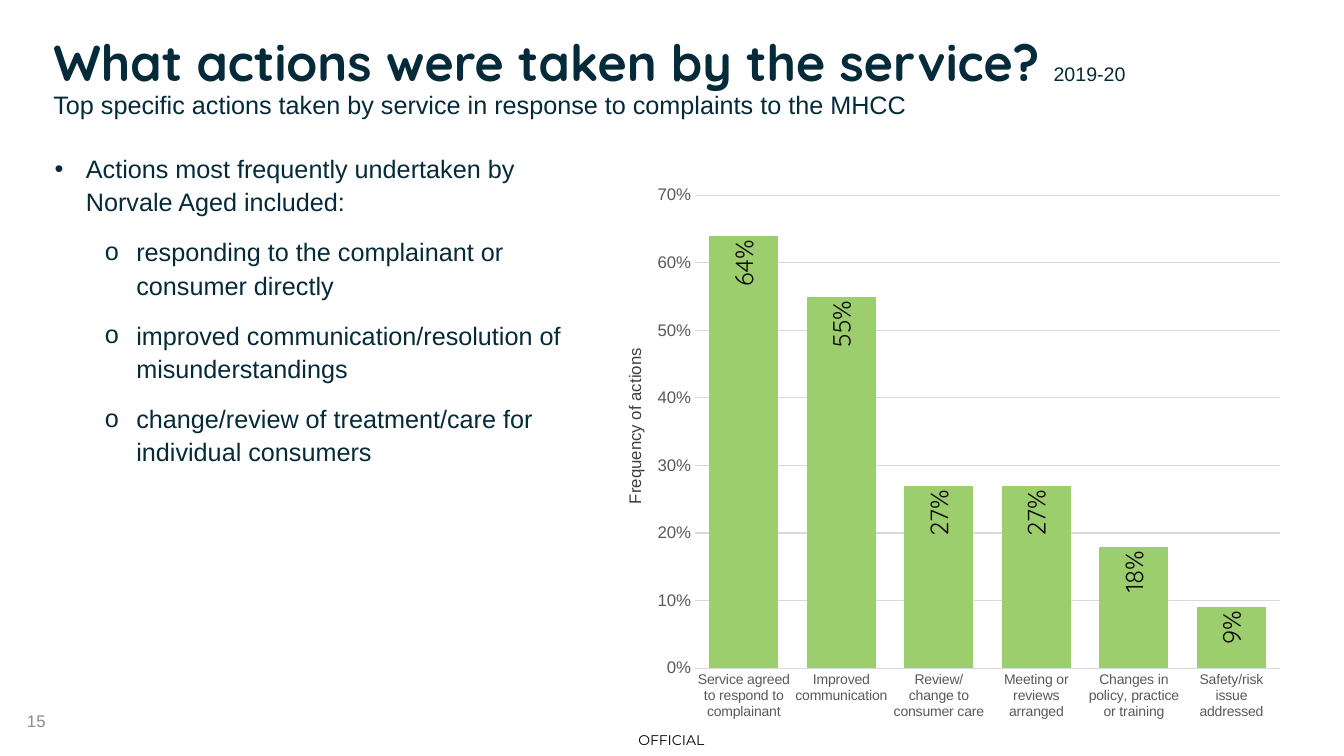
from lxml import etree
from pptx import Presentation
from pptx.chart.data import CategoryChartData
from pptx.dml.color import RGBColor
from pptx.enum.chart import XL_CHART_TYPE as ChartType
from pptx.enum.chart import XL_LABEL_POSITION as LabelPosition
from pptx.enum.chart import XL_TICK_MARK as TickMark
from pptx.enum.text import MSO_ANCHOR as Anchor
from pptx.enum.text import MSO_AUTO_SIZE as AutoSize
from pptx.enum.text import PP_ALIGN as Align
from pptx.oxml.ns import qn
from pptx.util import Cm, Pt

NAVY = RGBColor(0x05, 0x2A, 0x39)
GREEN = RGBColor(0x9D, 0xCE, 0x6E)
BLACK = RGBColor(0x00, 0x00, 0x00)
INK = RGBColor(0x0D, 0x0D, 0x0D)
DARK_GREY = RGBColor(0x40, 0x40, 0x40)
AXIS_GREY = RGBColor(0x59, 0x59, 0x59)
NUMBER_GREY = RGBColor(0x8C, 0x8C, 0x8C)
GRID_GREY = RGBColor(0xD9, 0xD9, 0xD9)

ACTIONS_INTRO = "Actions most frequently undertaken by Norvale Aged included:"
ACTIONS = [
    "responding to the complainant or consumer directly",
    "improved communication/resolution of misunderstandings",
    "change/review of treatment/care for individual consumers",
]
FREQUENCIES = {
    "Service agreed to respond to complainant": 0.64,
    "Improved communication": 0.55,
    "Review/change to consumer care": 0.27,
    "Meeting or reviews arranged": 0.27,
    "Changes in policy, practice or training": 0.18,
    "Safety/risk issue addressed": 0.09,
}


def style_font(font, size, color, name="Arial", bold=False):
    font.size, font.name, font.bold = Pt(size), name, bold
    font.color.rgb = color


def write(para, text, size=18, color=NAVY, name="Arial", bold=False,
          align=Align.LEFT, spacing=1.0, before=0, after=0):
    """Add a formatted span of text to a paragraph."""
    para.alignment, para.line_spacing = align, spacing
    para.space_before, para.space_after = Pt(before), Pt(after)
    span = para.add_run()
    span.text = text
    style_font(span.font, size, color, name, bold)


def add_bullet(para, char, left, hanging):
    props = para._p.get_or_add_pPr()
    props.set("marL", str(Cm(left)))
    props.set("indent", str(-Cm(hanging)))
    color = etree.SubElement(props, qn("a:buClr"))
    etree.SubElement(color, qn("a:srgbClr"), val=str(NAVY))
    etree.SubElement(props, qn("a:buFont"), typeface="Arial")
    etree.SubElement(props, qn("a:buChar"), char=char)


class SlideBuilder:
    def __init__(self, deck):
        self.page = deck.slides.add_slide(deck.slide_layouts[1])

    def place(self, shape, left, top, width, height, anchor=Anchor.TOP):
        shape.left, shape.top = Cm(left), Cm(top)
        shape.width, shape.height = Cm(width), Cm(height)
        frame = shape.text_frame
        frame.word_wrap, frame.auto_size = True, AutoSize.NONE
        frame.vertical_anchor = anchor
        return frame

    def title(self, heading, period, subtitle, *place):
        frame = self.place(self.page.shapes.title, *place)
        first = frame.paragraphs[0]
        write(first, heading, size=36, name="Quicksand", bold=True, spacing=0.9)
        write(first, period, size=14, spacing=0.9)
        write(frame.add_paragraph(), subtitle, spacing=0.9)

    def bullets(self, intro, items, *place):
        frame = self.place(self.page.placeholders[1], *place)
        first = frame.paragraphs[0]
        add_bullet(first, "•", 0.79, 0.79)
        write(first, intro, spacing=1.1, after=6)
        for item in items:
            para = frame.add_paragraph()
            para.level = 1
            add_bullet(para, "o", 2.06, 0.79)
            write(para, item, spacing=1.1, before=6, after=6)

    def label(self, text, *place, rotation=0, inset=None, **style):
        box = self.page.shapes.add_textbox(0, 0, 0, 0)
        frame = self.place(box, *place, anchor=Anchor.MIDDLE)
        box.rotation = rotation
        if inset is not None:
            frame.margin_left = frame.margin_right = Cm(inset)
            frame.margin_top = frame.margin_bottom = Cm(inset)
        write(frame.paragraphs[0], text, **style)

    def column_chart(self, values, left, top, width, height, plot_area):
        data = CategoryChartData(number_format="0%")
        data.categories = list(values)
        data.add_series("Series 1", list(values.values()))
        chart = self.page.shapes.add_chart(
            ChartType.COLUMN_CLUSTERED, Cm(left), Cm(top),
            Cm(width), Cm(height), data).chart
        chart.has_title = chart.has_legend = False
        style_font(chart.font, 10, BLACK)

        # Columns and their upright labels
        plot = chart.plots[0]
        plot.gap_width, plot.vary_by_categories = 41, False
        series = plot.series[0]
        series.format.fill.solid()
        series.format.fill.fore_color.rgb = GREEN
        labels = series.data_labels
        labels.show_value, labels.position = True, LabelPosition.INSIDE_END
        labels.number_format, labels.number_format_is_linked = "0%", False
        style_font(labels.font, 18, INK, "Quicksand")
        turn = labels._element.find(qn("c:txPr")).find(qn("a:bodyPr"))
        turn.set("rot", "-5400000")
        turn.set("vert", "horz")

        # Axes
        categories, scale = chart.category_axis, chart.value_axis
        for axis, size in ((categories, 10), (scale, 12)):
            axis.major_tick_mark = axis.minor_tick_mark = TickMark.NONE
            style_font(axis.tick_labels.font, size, AXIS_GREY)
        scale.minimum_scale, scale.maximum_scale, scale.major_unit = 0, 0.7, 0.1
        scale.tick_labels.number_format = "0%"
        scale.tick_labels.number_format_is_linked = False
        scale.format.line.fill.background()
        scale.has_major_gridlines = True
        for line in (categories.format.line, scale.major_gridlines.format.line):
            line.color.rgb, line.width = GRID_GREY, Pt(0.75)

        # Fixed inner plot area
        area = chart._chartSpace.chart.plotArea
        for old in area.findall(qn("c:layout")):
            area.remove(old)
        layout = etree.Element(qn("c:layout"))
        area.insert(0, layout)
        manual = etree.SubElement(layout, qn("c:manualLayout"))
        settings = [("layoutTarget", "inner"), ("xMode", "edge"), ("yMode", "edge")]
        settings += zip("xywh", plot_area)
        for tag, value in settings:
            etree.SubElement(manual, qn(f"c:{tag}"), val=str(value))


def main():
    deck = Presentation()
    deck.slide_width, deck.slide_height = Cm(33.86), Cm(19.05)
    slide = SlideBuilder(deck)

    # Footer
    slide.label("OFFICIAL", 15.62, 18.26, 2.59, 0.79, inset=0, size=10,
                name="Montserrat", color=BLACK, align=Align.CENTER)
    slide.label("15", 0.43, 17.65, 7.62, 1.02, size=12, color=NUMBER_GREY)

    # Heading and findings
    slide.title("What actions were taken by the service? ", "2019-20",
                "Top specific actions taken by service in response to "
                "complaints to the MHCC", 1.09, 0.84, 31.7, 2.36)
    slide.bullets(ACTIONS_INTRO, ACTIONS, 1.12, 3.66, 14.33, 8.26)

    # Chart with its axis caption
    slide.column_chart(FREQUENCIES, 16.54, 1.98, 16.2, 16.33,
                       plot_area=(0.06, 0.18, 0.91, 0.73))
    slide.label("Frequency of actions", 13, 10.19, 5.97, 1.09, rotation=270,
                size=12, color=DARK_GREY, align=Align.CENTER)

    deck.save("out.pptx")


if __name__ == "__main__":
    main()
